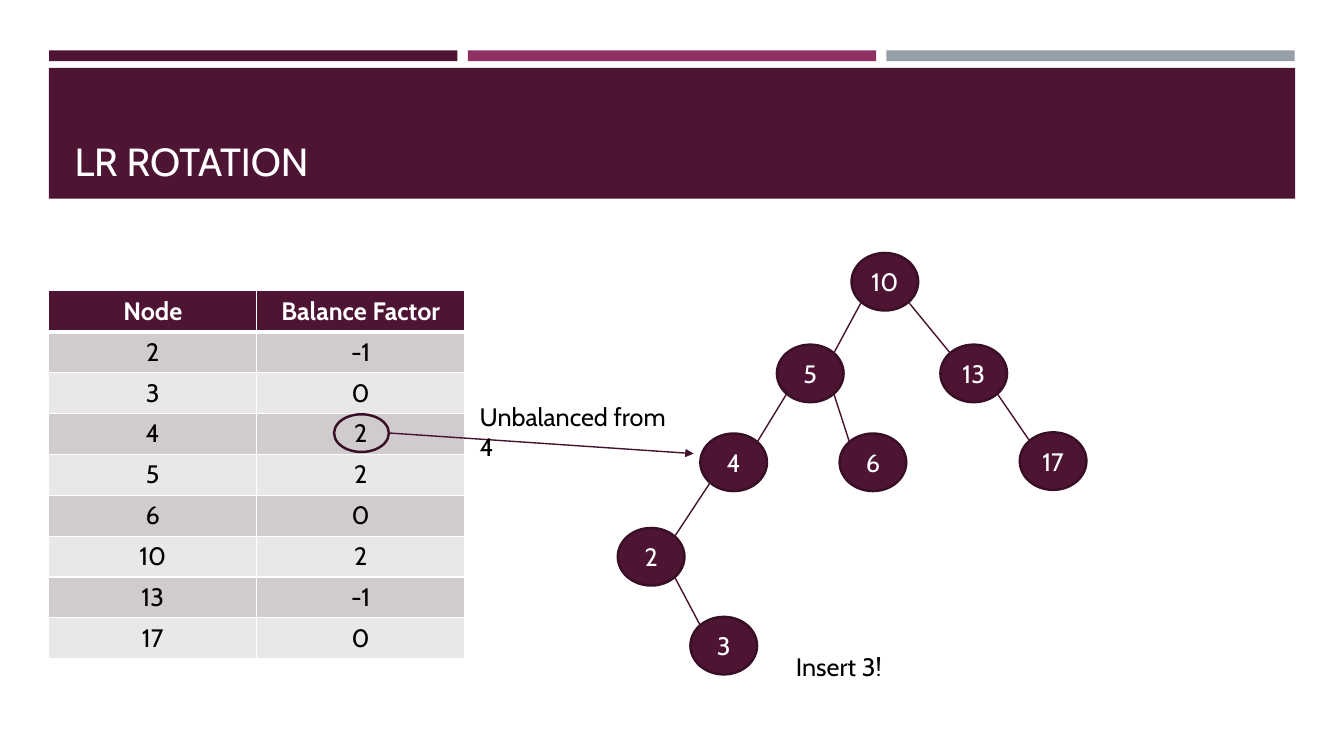
import math

import lxml.etree
import pptx
import pptx.util
from pptx.dml.color import RGBColor
from pptx.enum.shapes import MSO_CONNECTOR, MSO_SHAPE
from pptx.enum.text import MSO_ANCHOR, PP_ALIGN
from pptx.oxml.ns import qn
from pptx.util import Cm, Pt

COLORS = {
    "plum": "4D1434",
    "outline": "390F26",
    "edge": "45122F",
    "magenta": "903163",
    "gray": "969FA7",
    "band_dark": "D0CCCE",
    "band_light": "E9E7E8",
    "white": "FFFFFF",
    "black": "000000",
}
COLORS_RGB = {name: RGBColor.from_string(value) for name, value in COLORS.items()}
FONT = "Cabin"

deck = pptx.Presentation()
deck.slide_width, deck.slide_height = Cm(33.87), Cm(19.05)
slide = deck.slides.add_slide(deck.slide_layouts[6])


def write(frame, text, color, size=18, align=PP_ALIGN.LEFT, bold=False):
    frame.text = text
    paragraph = frame.paragraphs[0]
    paragraph.alignment = align
    paragraph.font.name = FONT
    paragraph.font.size = Pt(size)
    paragraph.font.bold = bold
    paragraph.font.color.rgb = COLORS_RGB[color]


def add_line(start, end):
    """Draw a thin plum line between two (x, y) points in centimetres."""
    line = slide.shapes.add_connector(
        MSO_CONNECTOR.STRAIGHT, *(Cm(value) for value in (*start, *end)))
    line.line.color.rgb = COLORS_RGB["edge"]
    line.line.width = Pt(1)
    lxml.etree.SubElement(line._element.spPr, qn("a:effectLst"))
    return line


# Header
header_bars = [
    (1.24, 1.27, 10.29, 0.27, "plum"),
    (11.79, 1.27, 10.29, 0.27, "magenta"),
    (22.34, 1.27, 10.29, 0.27, "gray"),
    (1.23, 1.71, 31.41, 3.3, "plum"),
]
for *box, color in header_bars:
    bar = slide.shapes.add_shape(MSO_SHAPE.RECTANGLE, *map(Cm, box))
    bar.shadow.inherit = False
    bar.fill.solid()
    bar.fill.fore_color.rgb = COLORS_RGB[color]
    bar.line.fill.background()

title = slide.shapes.add_textbox(Cm(1.63), Cm(1.96), Cm(30.63), Cm(2.82)).text_frame
title.word_wrap = True
title.vertical_anchor = MSO_ANCHOR.BOTTOM
write(title, "LR ROTATION", "white", size=28)

# Balance factors
balance_rows = [
    ("Node", "Balance Factor"),
    ("2", "-1"),
    ("3", "0"),
    ("4", "2"),
    ("5", "2"),
    ("6", "0"),
    ("10", "2"),
    ("13", "-1"),
    ("17", "0"),
]
ROW_HEIGHT = 1.03
balance_table = slide.shapes.add_table(
    len(balance_rows), 2, Cm(1.23), Cm(7.33), Cm(10.48),
    Cm(ROW_HEIGHT * len(balance_rows))).table
for row, texts in enumerate(balance_rows):
    balance_table.rows[row].height = Cm(ROW_HEIGHT)
    is_header = row == 0
    band = "plum" if is_header else ("band_light", "band_dark")[row % 2]
    for column, text in enumerate(texts):
        cell = balance_table.cell(row, column)
        write(cell.text_frame, text, "white" if is_header else "black",
              align=PP_ALIGN.CENTER, bold=is_header)
        for side in "LRTB":
            thick = (is_header and side == "B") or (row == 1 and side == "T")
            border = lxml.etree.SubElement(
                cell._tc.get_or_add_tcPr(), qn("a:ln" + side),
                w=str(Pt(3 if thick else 1)))
            border_fill = lxml.etree.SubElement(border, qn("a:solidFill"))
            lxml.etree.SubElement(border_fill, qn("a:srgbClr"), val=COLORS["white"])
        cell.fill.solid()
        cell.fill.fore_color.rgb = COLORS_RGB[band]

# Tree: node centres and parent-child pairs
NODE_WIDTH, NODE_HEIGHT = 1.68, 1.45
node_centers = {
    10: (22.3, 7.1),
    5: (20.42, 9.41),
    13: (24.54, 9.41),
    4: (18.49, 11.65),
    6: (22.0, 11.65),
    17: (26.54, 11.62),
    2: (16.41, 14.03),
    3: (18.24, 16.27),
}
tree_edges = [(10, 5), (10, 13), (5, 4), (5, 6), (13, 17), (4, 2), (2, 3)]

for key, (x, y) in node_centers.items():
    node = slide.shapes.add_shape(
        MSO_SHAPE.OVAL, Cm(x - NODE_WIDTH / 2), Cm(y - NODE_HEIGHT / 2),
        Cm(NODE_WIDTH), Cm(NODE_HEIGHT))
    node.shadow.inherit = False
    node.fill.solid()
    node.fill.fore_color.rgb = COLORS_RGB["plum"]
    node.line.color.rgb = COLORS_RGB["outline"]
    node.line.width = Pt(1.75)
    label = node.text_frame
    label.margin_left = label.margin_right = 0
    label.vertical_anchor = MSO_ANCHOR.MIDDLE
    write(label, str(key), "white", align=PP_ALIGN.CENTER)

# Edges meet each ellipse at its diagonal points
diagonal_x = NODE_WIDTH / 2 * math.sqrt(0.5)
diagonal_y = NODE_HEIGHT / 2 * math.sqrt(0.5)
for parent, child in tree_edges:
    (parent_x, parent_y), (child_x, child_y) = node_centers[parent], node_centers[child]
    toward_child = math.copysign(diagonal_x, child_x - parent_x)
    add_line((parent_x + toward_child, parent_y + diagonal_y),
             (child_x - toward_child, child_y - diagonal_y))

# Annotations
unbalanced_ring = slide.shapes.add_shape(
    MSO_SHAPE.OVAL, Cm(8.42), Cm(10.44), Cm(1.38), Cm(0.95))
unbalanced_ring.shadow.inherit = False
unbalanced_ring.fill.background()
unbalanced_ring.line.color.rgb = COLORS_RGB["outline"]
unbalanced_ring.line.width = Pt(1.75)

unbalanced_arrow = add_line((9.8, 10.91), (17.48, 11.43))
lxml.etree.SubElement(
    unbalanced_arrow.line._get_or_add_ln(), qn("a:tailEnd"), type="triangle")

notes = [
    ("Unbalanced from 4", 11.84, 9.98, 5.46, True),
    ("Insert 3!", 19.81, 16.28, 2.7, False),
]
for text, left, top, width, wraps in notes:
    note = slide.shapes.add_textbox(Cm(left), Cm(top), Cm(width), Cm(1.02)).text_frame
    note.word_wrap = wraps
    write(note, text, "black")

deck.save("out.pptx")
